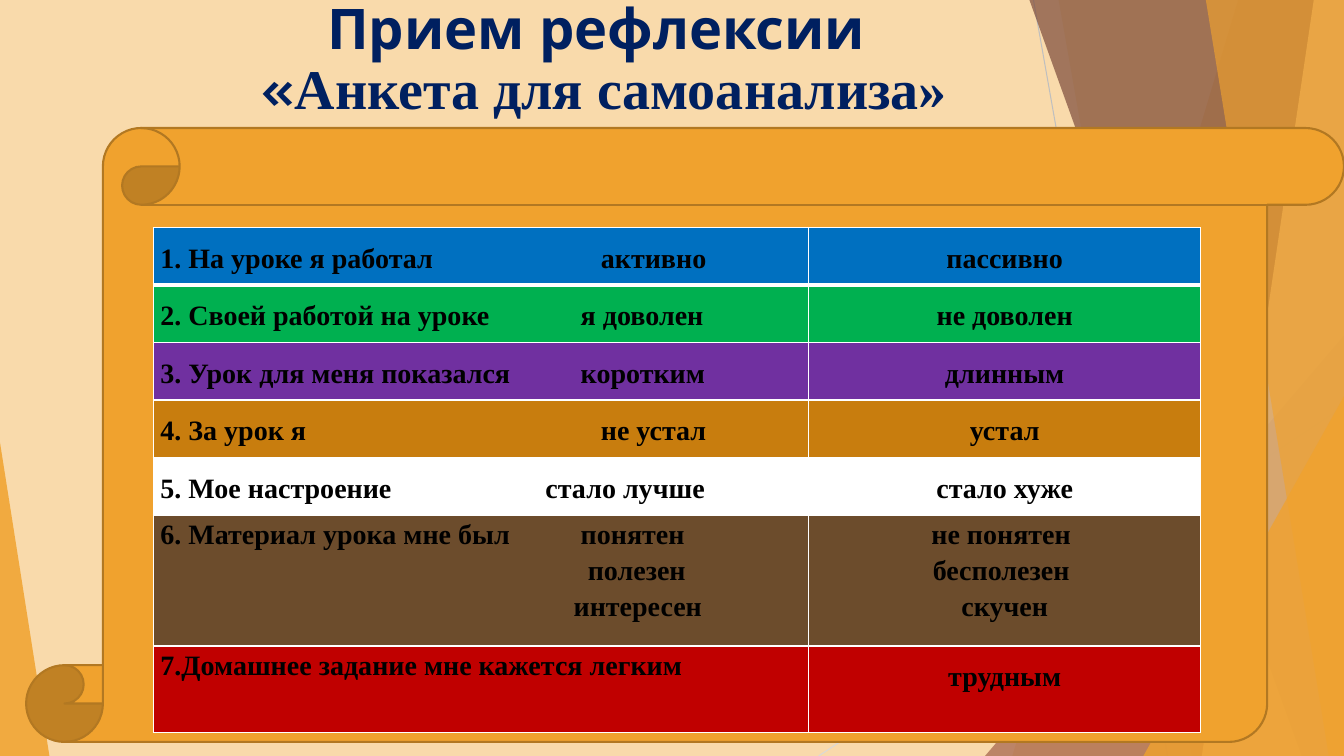
from lxml import etree
from pptx import Presentation
from pptx.dml.color import RGBColor
from pptx.enum.shapes import MSO_CONNECTOR, MSO_SHAPE
from pptx.enum.text import MSO_ANCHOR, MSO_AUTO_SIZE, PP_ALIGN
from pptx.oxml.ns import qn
from pptx.util import Inches, Pt

LEFT, CENTER = PP_ALIGN.LEFT, PP_ALIGN.CENTER
TOP, MIDDLE = MSO_ANCHOR.TOP, MSO_ANCHOR.MIDDLE
STRAIGHT = MSO_CONNECTOR.STRAIGHT
TRIANGLE, SCROLL = MSO_SHAPE.ISOSCELES_TRIANGLE, MSO_SHAPE.VERTICAL_SCROLL
SERIF, SANS = "Times New Roman", "Karla"
WIDE, HIGH = 13.33, 7.5

COLORS = {
    "sand": "F9DAAB", "amber": "F0A22E", "rust": "A5644E", "brown": "7C4B3B",
    "peach": "F6C782", "edge": "B27822", "gray": "BFBFBF", "pale": "D9D9D9",
    "navy": "002060", "black": "000000", "white": "FFFFFF", "blue": "0070C0",
    "green": "00B050", "violet": "7030A0", "ochre": "C87D0E",
    "umber": "6C4C2C", "red": "C00000",
}

# Each row: fill, height, line spacing of both cells, lines of both cells.
# A line of the first cell is (question, answer, tab position in inches).
ROWS = [
    ("blue", 0.57, (1.5, 1.5),
     [("1. На уроке я работал", "активно", 4.37)], ["пассивно"]),
    ("green", 0.57, (1.5, 1.5),
     [("2. Своей работой на уроке", "я доволен", 4.17)], ["не доволен"]),
    ("violet", 0.57, (1.5, 1.5),
     [("3. Урок для меня показался", "коротким", 4.17)], ["длинным"]),
    ("ochre", 0.57, (1.5, 1.5),
     [("4. За урок я", "не устал", 4.37)], ["устал"]),
    ("white", 0.57, (1.5, 1.5),
     [("5. Мое настроение", "стало лучше", 3.82)], ["стало хуже"]),
    ("umber", 1.3, (1.15, 1.15),
     [("6. Материал урока мне был", "понятен", 4.17),
      ("", "полезен", 4.24), ("", "интересен", 4.1)],
     ["не понятен ", "бесполезен ", "скучен"]),
    ("red", 0.86, (1.15, 1.5),
     [("7.Домашнее задание мне кажется легким", "", 0)], ["трудным"]),
]


def color(name):
    return RGBColor.from_string(COLORS[name])


def paint(shape, name, alpha):
    """Fill a shape without outline; alpha is the opacity in percent."""
    shape.shadow.inherit = False
    shape.fill.solid()
    shape.fill.fore_color.rgb = color(name)
    shape.line.fill.background()
    tint = shape.fill._xPr.find(".//" + qn("a:srgbClr"))
    etree.SubElement(tint, qn("a:alpha"), val=str(alpha * 1000))


def add_line(slide, start, end, name):
    line = slide.shapes.add_connector(STRAIGHT, *map(Inches, start + end))
    line.line.color.rgb = color(name)
    line.line.width = Pt(0.75)
    etree.SubElement(line._element.spPr, qn("a:effectLst"))


def add_band(slide, top, foot, name, alpha):
    """Strip from a slanted left side to the right edge of the slide."""
    points = [(top, 0), (WIDE, 0), (WIDE, HIGH), (foot, HIGH)]
    spots = [(Inches(x), Inches(y)) for x, y in points]
    form = slide.shapes.build_freeform(*spots[0], scale=1.0)
    form.add_line_segments(spots[1:], close=True)
    paint(form.convert_to_shape(), name, alpha)


def add_wedge(slide, box, apex, name, alpha):
    wedge = slide.shapes.add_shape(TRIANGLE, *map(Inches, box))
    wedge.adjustments[0] = apex
    paint(wedge, name, alpha)


def add_decor(slide):
    slide.background.fill.solid()
    slide.background.fill.fore_color.rgb = color("sand")
    add_line(slide, (10.25, 0), (11.58, HIGH), "gray")
    add_line(slide, (WIDE, 4.03), (8.12, HIGH), "pale")
    add_band(slide, 12.28, 10.04, "amber", 30)
    add_band(slide, 10.5, 11.82, "amber", 20)
    add_wedge(slide, (9.77, 3.33, 3.56, 4.17), 1, "rust", 72)
    add_band(slide, 10.21, 12.91, "brown", 70)
    add_band(slide, 13.03, 11.92, "peach", 70)
    add_band(slide, 11.96, 13.18, "amber", 65)
    add_wedge(slide, (11.34, 3.93, 1.99, 3.57), 1, "amber", 80)
    add_wedge(slide, (0, 4.39, 0.49, 3.11), 0, "amber", 85)


def add_title(slide, box):
    title = slide.shapes.title
    title.left, title.top, title.width, title.height = map(Inches, box)
    slide.shapes._spTree.append(title._element)  # in front of the decor
    frame = title.text_frame
    frame.word_wrap = True
    frame.auto_size = MSO_AUTO_SIZE.NONE
    frame.vertical_anchor = MIDDLE
    para = frame.paragraphs[0]
    para.alignment, para.line_spacing = CENTER, 0.9
    para.font.size, para.font.bold = Pt(40), True
    para.font.color.rgb = color("navy")
    for text, face in (("Прием рефлексии ", SANS), (None, None),
                       ("«", SANS), ("Анкета для самоанализа»", SERIF)):
        if text is None:
            para.add_line_break()
            continue
        run = para.add_run()
        run.text, run.font.name = text, face


def add_scroll(slide, box):
    scroll = slide.shapes.add_shape(SCROLL, *map(Inches, box))
    scroll.shadow.inherit = False
    scroll.fill.solid()
    scroll.fill.fore_color.rgb = color("amber")
    scroll.line.color.rgb = color("edge")
    scroll.line.width = Pt(1.5)


def set_border(cell, side, width):
    line = etree.SubElement(cell._tc.get_or_add_tcPr(), qn("a:ln" + side),
                            w=str(Pt(width)))
    fill = etree.SubElement(line, qn("a:solidFill"))
    etree.SubElement(fill, qn("a:srgbClr"), val=COLORS["white"])


def set_tab(para, pos):
    tabs = etree.SubElement(para._p.get_or_add_pPr(), qn("a:tabLst"))
    etree.SubElement(tabs, qn("a:tab"), pos=str(Inches(pos)), algn="l")


def fill_cell(cell, lines, align, gap, fill, row):
    for side in "LRTB":
        thick = (row, side) in ((0, "B"), (1, "T"))
        set_border(cell, side, 3 if thick else 1)
    cell.fill.solid()
    cell.fill.fore_color.rgb = color(fill)
    cell.margin_left = cell.margin_right = Inches(0.07)
    cell.margin_top = cell.margin_bottom = 0
    cell.vertical_anchor = TOP
    frame = cell.text_frame
    for i, line in enumerate(lines):
        para = frame.add_paragraph() if i else frame.paragraphs[0]
        if isinstance(line, tuple):
            ask, reply, pos = line
            para.text = f"{ask}\t{reply}" if reply else ask
            if reply:
                set_tab(para, pos)
        else:
            para.text = line
        para.alignment, para.line_spacing = align, gap
        para.font.name, para.font.size = SERIF, Pt(20)
        para.font.bold = True
        para.font.color.rgb = color("black")


def add_survey(slide, box):
    table = slide.shapes.add_table(len(ROWS), 2, *map(Inches, box)).table
    split = 6.5
    table.columns[0].width = Inches(split)
    table.columns[1].width = Inches(box[2] - split)
    for i, (fill, height, gaps, asks, others) in enumerate(ROWS):
        table.rows[i].height = Inches(height)
        fill_cell(table.cell(i, 0), asks, LEFT, gaps[0], fill, i)
        fill_cell(table.cell(i, 1), others, CENTER, gaps[1], fill, i)


def main():
    deck = Presentation()
    deck.slide_width, deck.slide_height = Inches(WIDE), Inches(HIGH)
    slide = deck.slides.add_slide(deck.slide_layouts[5])
    add_decor(slide)
    add_title(slide, (1.69, -0.13, 8.59, 1.48))
    add_scroll(slide, (0.26, 1.27, 13.07, 6.09))
    add_survey(slide, (1.52, 2.26, 10.39, 5.01))
    deck.save("out.pptx")


if __name__ == "__main__":
    main()
